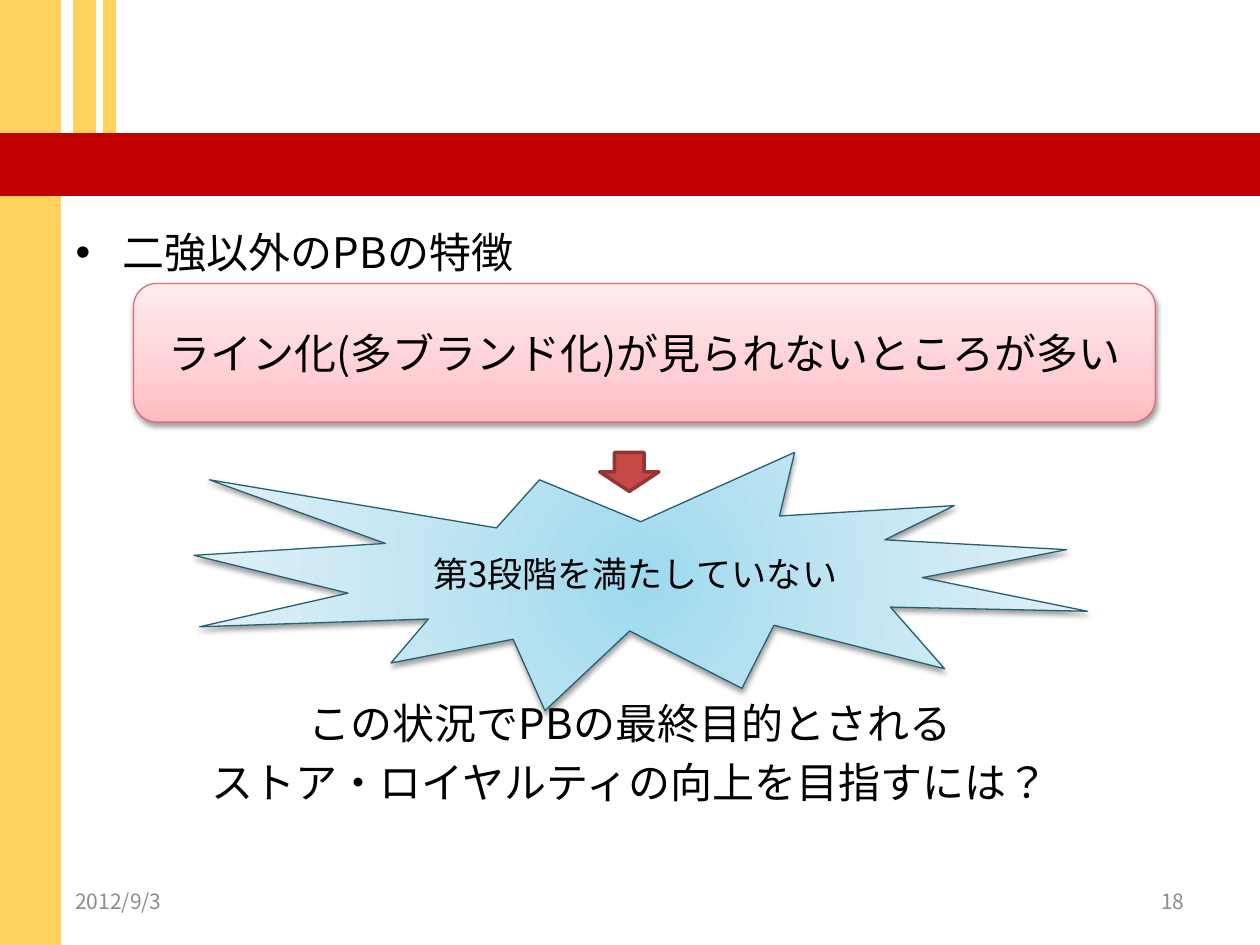
import pptx
import pptx.util
import pptx.dml.color
import pptx.enum.lang
import pptx.enum.shapes
import pptx.enum.text
import pptx.oxml
import pptx.oxml.ns
from lxml import etree

Inches, Pt = pptx.util.Inches, pptx.util.Pt
RGB = pptx.dml.color.RGBColor.from_string
SHAPE = pptx.enum.shapes.MSO_SHAPE
ALIGN = pptx.enum.text.PP_ALIGN
qn = pptx.oxml.ns.qn

FONT = "Noto Sans CJK JP"
COLORS = {"yellow": "FFD25D", "red": "C00000", "text": "000000", "footer": "8C8C8C",
          "arrow": "C64847", "arrow line": "923535",
          "box line": "E46778", "burst line": "246172"}


def write(paragraph, text, size, color, alignment):
    paragraph.alignment = alignment
    run = paragraph.add_run()
    run.text = text
    formats = {"name": FONT, "size": Pt(size),
               "language_id": pptx.enum.lang.MSO_LANGUAGE_ID.JAPANESE}
    for name, value in formats.items():
        setattr(run.font, name, value)
    run.font.color.rgb = RGB(COLORS[color])
    etree.SubElement(run.font._element, qn("a:ea")).set("typeface", FONT)


def add_shape(kind, box, line, width, fill=None):
    shape = slide.shapes.add_shape(kind, *map(Inches, box))
    shape.shadow.inherit = False
    if fill:
        shape.fill.solid()
        shape.fill.fore_color.rgb = RGB(COLORS[fill])
    shape.line.color.rgb = RGB(COLORS[line])
    shape.line.width = Pt(width)
    return shape


presentation = pptx.Presentation()
presentation.slide_width, presentation.slide_height = Inches(10), Inches(7.5)
slide = presentation.slides.add_slide(presentation.slide_layouts[1])
title = slide.shapes.title
title._element.getparent().remove(title._element)

# Yellow stripes and red band
for color, box in [("yellow", (0.83, 0, 0.08, 1.07)),
                   ("yellow", (0.59, 0, 0.16, 1.07)),
                   ("yellow", (0, 0, 0.47, 7.5)),
                   ("red", (0, 1.07, 10, 0.47))]:
    add_shape(SHAPE.RECTANGLE, box, color, 2, color)

# Body: a bullet at the top, the closing question below the burst
body = slide.placeholders[1]
slide.shapes._spTree.append(body._element)
for name, value in {"left": 0.5, "top": 1.75, "width": 9, "height": 4.95}.items():
    setattr(body, name, Inches(value))
frame = body.text_frame
frame.auto_size = pptx.enum.text.MSO_AUTO_SIZE.NONE
for index, (text, alignment, space) in enumerate([
        ("二強以外のPBの特徴", ALIGN.LEFT, 4.8),
        ("この状況でPBの最終目的とされる", ALIGN.CENTER, 240),
        ("ストア・ロイヤルティの向上を目指すには？", ALIGN.CENTER, 4.8)]):
    paragraph = frame.add_paragraph() if index else frame.paragraphs[0]
    write(paragraph, text, 24, "text", alignment)
    paragraph.space_before = Pt(space)
    if index:
        etree.SubElement(paragraph._p.get_or_add_pPr(), qn("a:buNone"))

# Date and slide number
for left, text, alignment in [(0.5, "2012/9/3", ALIGN.LEFT), (7.17, "18", ALIGN.RIGHT)]:
    footer = slide.shapes.add_textbox(Inches(left), Inches(6.95), Inches(2.33), Inches(0.4))
    footer.text_frame.word_wrap = True
    footer.text_frame.vertical_anchor = pptx.enum.text.MSO_ANCHOR.MIDDLE
    write(footer.text_frame.paragraphs[0], text, 12, "footer", alignment)

# Finding, arrow and conclusion
LINEAR = '<a:lin ang="16200000" scaled="1"/>'
RADIAL = ('<a:path path="circle"><a:fillToRect l="50000" t="50000" r="50000" b="50000"/>'
          '</a:path>')
SHADOW = ('<a:outerShdw %s blurRad="39400" dist="20300" dir="5400000" rotWithShape="0">'
          '<a:srgbClr val="000000"><a:alpha val="38000"/></a:srgbClr></a:outerShdw>'
          % pptx.oxml.ns.nsdecls("a"))
add_shape(SHAPE.DOWN_ARROW, (4.76, 3.59, 0.47, 0.31), "arrow line", 2, "arrow")
for kind, box, line, stops, direction, text, size in [
        (SHAPE.ROUNDED_RECTANGLE, (1.06, 2.25, 8.11, 1.1), "box line",
         {0: "FFBCC2", 35: "FFCFD3", 100: "FFEDEE"}, LINEAR,
         "ライン化(多ブランド化)が見られないところが多い", 24),
        (SHAPE.EXPLOSION1, (1.54, 3.59, 7.09, 2.05), "burst line",
         {0: "9ED9EE", 50: "C4E6F3", 100: "E2F2F8"}, RADIAL,
         "第3段階を満たしていない", 20)]:
    shape = add_shape(kind, box, line, 0.75)
    shape.fill.gradient()
    properties = shape._element.spPr
    stop_xml = "".join(f'<a:gs pos="{position * 1000}"><a:srgbClr val="{color}"/></a:gs>'
                       for position, color in stops.items())
    gradient = pptx.oxml.parse_xml(
        f'<a:gradFill {pptx.oxml.ns.nsdecls("a")} rotWithShape="1">'
        f'<a:gsLst>{stop_xml}</a:gsLst>{direction}</a:gradFill>')
    properties.replace(properties.find(qn("a:gradFill")), gradient)
    properties.find(qn("a:effectLst")).append(pptx.oxml.parse_xml(SHADOW))
    shape.text_frame.word_wrap = True
    shape.text_frame.vertical_anchor = pptx.enum.text.MSO_ANCHOR.MIDDLE
    write(shape.text_frame.paragraphs[0], text, size, "text", ALIGN.CENTER)

presentation.save("out.pptx")
